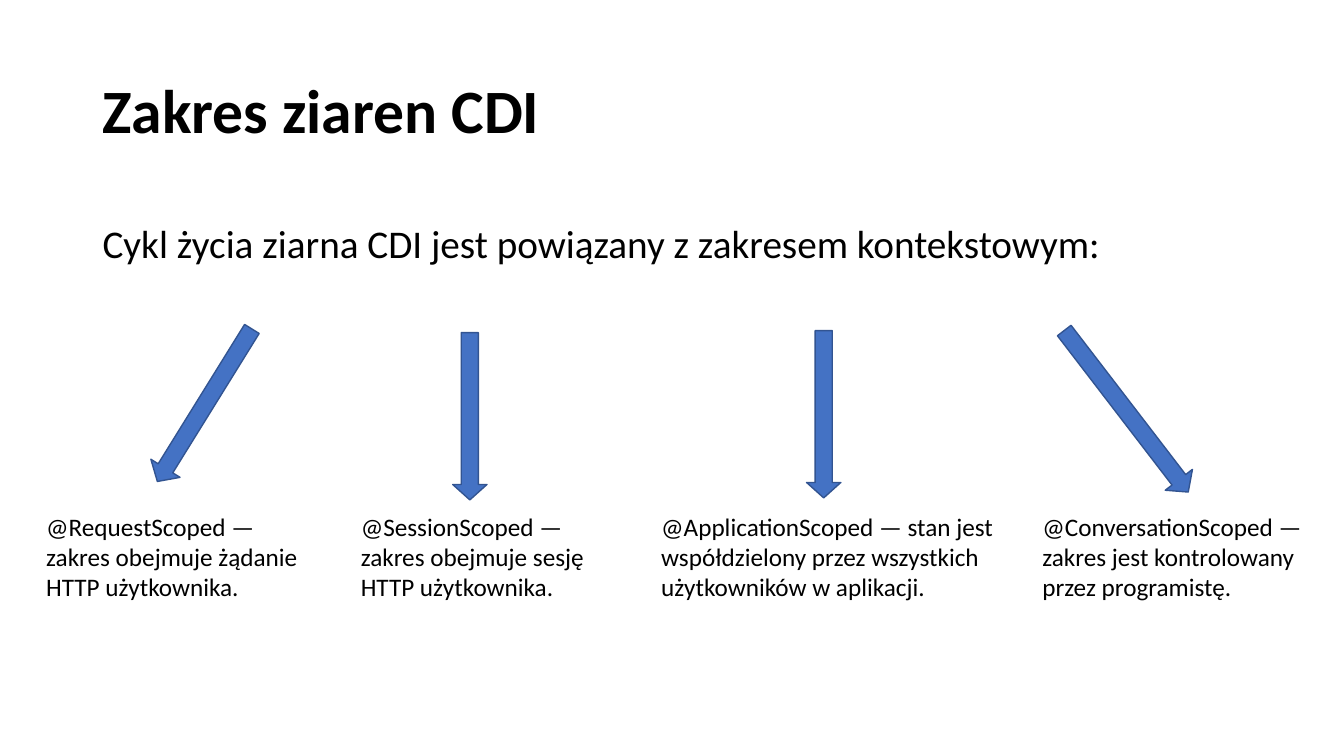
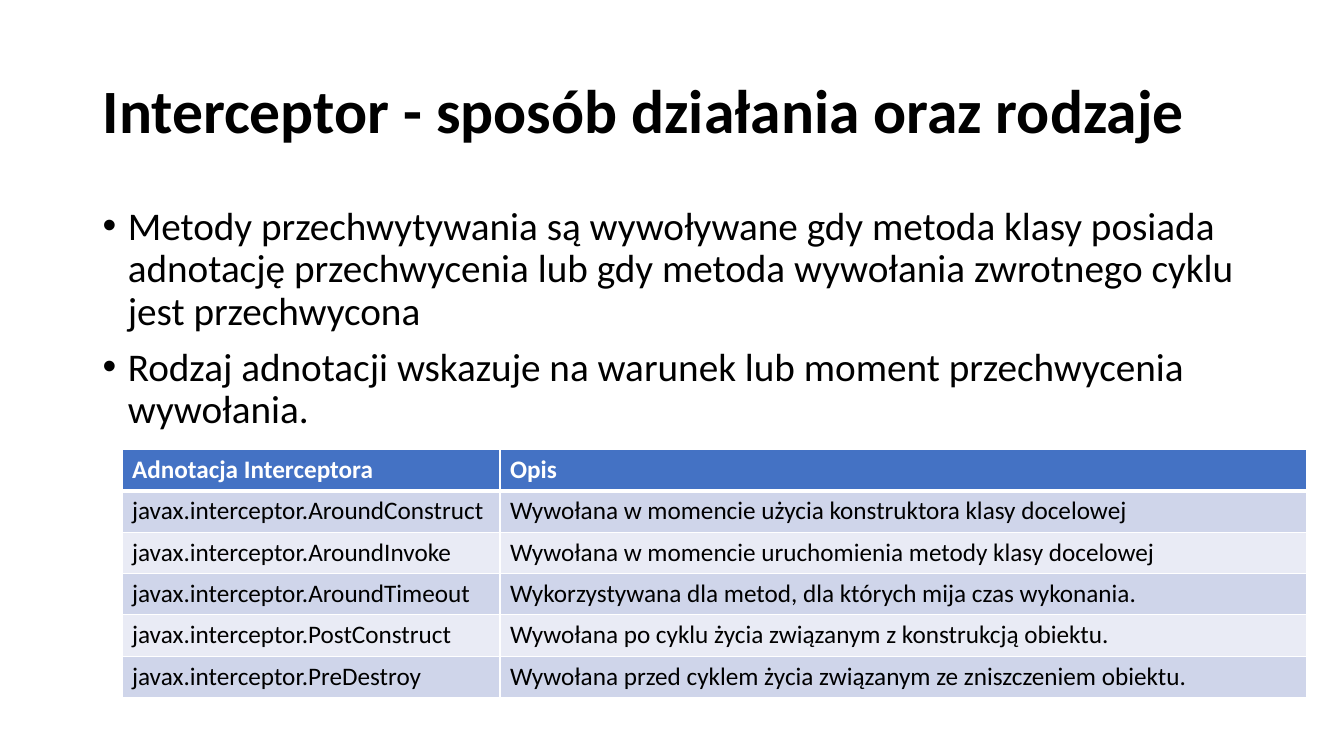
import pptx
import pptx.util
import pptx.dml.color
import pptx.enum.shapes
import pptx.enum.text
import pptx.oxml
import pptx.oxml.ns

Inches, Pt = pptx.util.Inches, pptx.util.Pt
RGBColor = pptx.dml.color.RGBColor
MSO_ANCHOR = pptx.enum.text.MSO_ANCHOR

BLACK = RGBColor(0x00, 0x00, 0x00)
WHITE = RGBColor(0xFF, 0xFF, 0xFF)
BLUE = RGBColor(0x44, 0x72, 0xC4)
DARK_BLUE = RGBColor(0x32, 0x54, 0x91)
BANDS = (RGBColor(0xCF, 0xD5, 0xEA), RGBColor(0xE9, 0xEB, 0xF5))
FONT = "Calibri"


def write(p, text, size=18, color=BLACK, bold=False, line=None, before=None, bullet=False):
    """Put one formatted run into paragraph p."""
    r = p.add_run()
    r.text = text
    r.font.name, r.font.size, r.font.bold = FONT, Pt(size), bold
    r.font.color.rgb = color
    if line:
        p.line_spacing = line
    if before is not None:
        p.space_before = Pt(before)
    if bullet:
        pPr = p._p.get_or_add_pPr()
        pPr.set("marL", str(Inches(0.25)))
        pPr.set("indent", str(-Inches(0.25)))
        ns = pptx.oxml.ns.nsdecls("a")
        pPr.append(pptx.oxml.parse_xml(f'<a:buFont {ns} typeface="Arial"/>'))
        pPr.append(pptx.oxml.parse_xml(f'<a:buChar {ns} char="•"/>'))


def set_borders(cell, **widths):
    """Draw white cell borders; widths maps L, R, T, B to points."""
    tcPr = cell._tc.get_or_add_tcPr()
    for side, width in widths.items():
        tcPr.append(pptx.oxml.parse_xml(
            f'<a:ln{side} {pptx.oxml.ns.nsdecls("a")} w="{Pt(width)}">'
            f'<a:solidFill><a:srgbClr val="{WHITE}"/></a:solidFill></a:ln{side}>'))


class Deck:
    LEFT, WIDTH = 0.92, 11.5

    def __init__(self):
        self.prs = pptx.Presentation()
        self.prs.slide_width, self.prs.slide_height = Inches(13.33), Inches(7.5)
        self.s = None

    def slide(self, title):
        self.s = self.prs.slides.add_slide(self.prs.slide_layouts[6])
        self.text([title], self.LEFT, 0.4, self.WIDTH, 1.45,
                  anchor=MSO_ANCHOR.MIDDLE, size=44, bold=True, line=0.9)

    def text(self, paragraphs, x, y, w, h, anchor=MSO_ANCHOR.TOP, **style):
        tf = self.s.shapes.add_textbox(Inches(x), Inches(y), Inches(w), Inches(h)).text_frame
        tf.word_wrap, tf.vertical_anchor = True, anchor
        for i, text in enumerate(paragraphs):
            write(tf.add_paragraph() if i else tf.paragraphs[0], text, **style)

    def body(self, paragraphs, y, h, bullet=False):
        self.text(paragraphs, self.LEFT, y, self.WIDTH, h,
                  size=28, line=0.9, before=10, bullet=bullet)

    def arrow(self, x, y, h, rotation=0):
        sp = self.s.shapes.add_shape(pptx.enum.shapes.MSO_SHAPE.DOWN_ARROW,
                                     Inches(x), Inches(y), Inches(0.34), Inches(h))
        sp.adjustments[0], sp.adjustments[1] = 0.5, 0.45
        sp.rotation = rotation
        sp.shadow.inherit = False
        sp.fill.solid()
        sp.fill.fore_color.rgb = BLUE
        sp.line.color.rgb, sp.line.width = DARK_BLUE, Pt(1)

    def table(self, rows, x, y, widths, row_height):
        table = self.s.shapes.add_table(
            len(rows), len(widths), Inches(x), Inches(y),
            Inches(sum(widths)), Inches(row_height * len(rows))).table
        for column, width in zip(table.columns, widths):
            column.width = Inches(width)
        for i, row in enumerate(rows):
            header = i == 0
            for j, text in enumerate(row):
                cell = table.cell(i, j)
                set_borders(cell, L=1, R=1, T=3 if i == 1 else 1, B=3 if header else 1)
                cell.fill.solid()
                cell.fill.fore_color.rgb = BLUE if header else BANDS[(i - 1) % 2]
                write(cell.text_frame.paragraphs[0], text,
                      color=WHITE if header else BLACK, bold=header)


def main():
    deck = Deck()

    # Bean scopes: an arrow down to each description
    deck.slide("Zakres ziaren CDI")
    deck.body(["Cykl życia ziarna CDI jest powiązany z zakresem kontekstowym:"], 2.18, 0.55)
    scopes = [  # arrow (x, y, height, rotation), text x, text width, text
        ((1.86, 3.13, 1.78, 31.8), 0.36, 2.9,
         "@RequestScoped — zakres obejmuje żądanie HTTP użytkownika."),
        ((4.49, 3.3, 1.66), 3.48, 2.57,
         "@SessionScoped — zakres obejmuje sesję HTTP użytkownika."),
        ((8, 3.28, 1.66), 6.46, 3.57,
         "@ApplicationScoped — stan jest współdzielony przez wszystkich użytkowników w aplikacji."),
        ((11, 3.07, 2.02, 322.5), 10.24, 2.9,
         "@ConversationScoped — zakres jest kontrolowany przez programistę."),
    ]
    for arrow, x, w, text in scopes:
        deck.arrow(*arrow)
        deck.text([text], x, 5.02, w, 1.31)

    # Interceptors: bullets and a table of annotations
    deck.slide("Interceptor - sposób działania oraz rodzaje")
    deck.body([
        "Metody przechwytywania są wywoływane gdy metoda klasy posiada adnotację przechwycenia "
        "lub gdy metoda wywołania zwrotnego cyklu jest przechwycona",
        "Rodzaj adnotacji wskazuje na warunek lub moment przechwycenia wywołania.",
    ], 2, 4.76, bullet=True)
    deck.table([
        ("Adnotacja Interceptora", "Opis"),
        ("javax.interceptor.AroundConstruct",
         "Wywołana w momencie użycia konstruktora klasy docelowej"),
        ("javax.interceptor.AroundInvoke",
         "Wywołana w momencie uruchomienia metody klasy docelowej"),
        ("javax.interceptor.AroundTimeout",
         "Wykorzystywana dla metod, dla których mija czas wykonania."),
        ("javax.interceptor.PostConstruct",
         "Wywołana po cyklu życia związanym z konstrukcją obiektu."),
        ("javax.interceptor.PreDestroy",
         "Wywołana przed cyklem życia związanym ze zniszczeniem obiektu."),
    ], 1.21, 4.46, (3.75, 8), 0.41)

    deck.prs.save("out.pptx")


if __name__ == "__main__":
    main()
